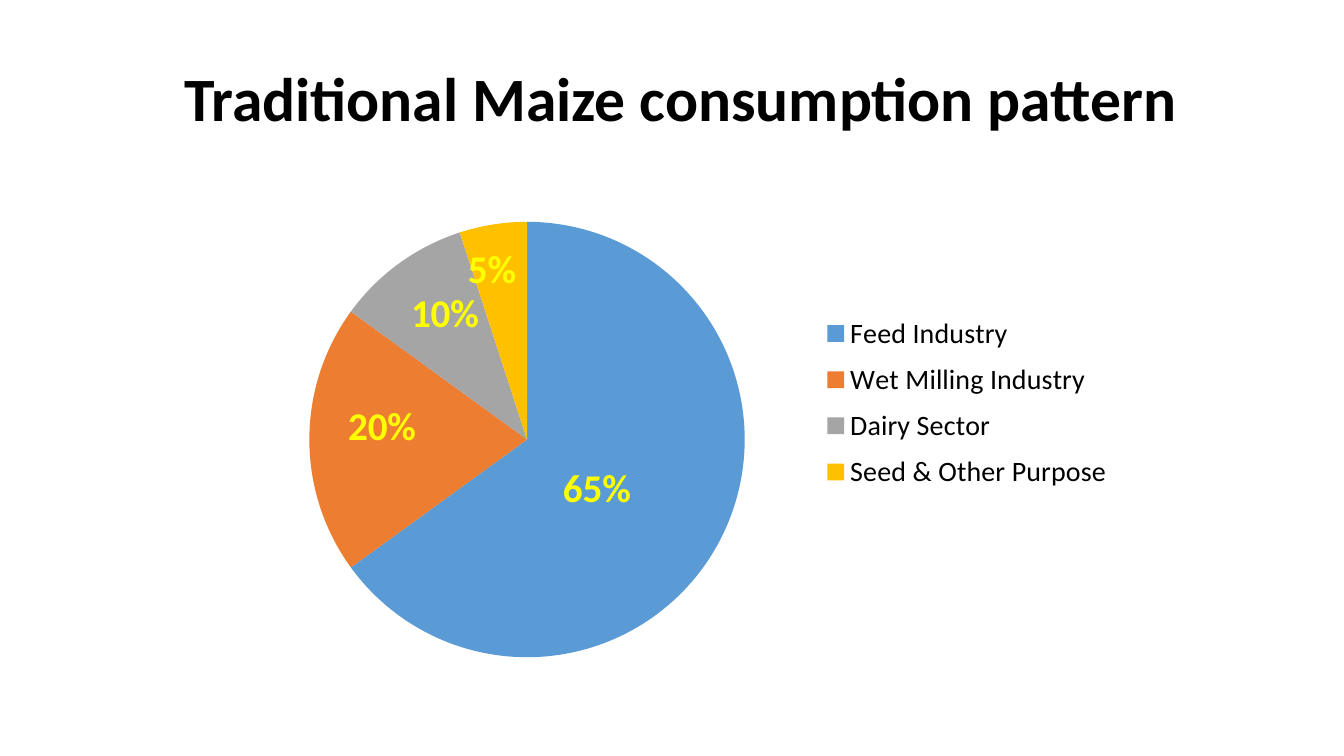
from pptx import Presentation
from pptx.chart.data import CategoryChartData
from pptx.dml.color import RGBColor
from pptx.enum.chart import XL_CHART_TYPE as ChartType
from pptx.enum.chart import XL_LABEL_POSITION as LabelPosition
from pptx.enum.chart import XL_LEGEND_POSITION as LegendPosition
from pptx.enum.text import MSO_ANCHOR as Anchor
from pptx.oxml import parse_xml
from pptx.oxml.ns import nsdecls
from pptx.util import Cm, Pt

COLORS = {
    "background": "FFFFFF",
    "text": "000000",
    "label": "FFFF00",
}

# category, percentage, slice colour, label shift from the slice centre
SLICES = [
    ("Feed Industry", 65, "5B9BD5", (-0.03, 0)),
    ("Wet Milling Industry", 20, "ED7D31", (-0.04, -0.02)),
    ("Dairy Sector", 10, "A5A5A5", (-0.02, -0.06)),
    ("Seed & Other Purpose", 5, "FFC000", (-0.02, -0.1)),
]


def manual_layout(**settings):
    """Return a c:layout element; settings follow the schema's order."""
    items = "".join(f'<c:{name} val="{value}"/>' for name, value in settings.items())
    return parse_xml(
        f'<c:layout {nsdecls("c")}><c:manualLayout>{items}</c:manualLayout></c:layout>'
    )


def place(element, x, y, w, h, **target):
    """Fix a chart part at fractions of the chart's size."""
    for old_layout in element.xpath("./c:layout"):
        element.remove(old_layout)
    layout = manual_layout(**target, xMode="edge", yMode="edge", x=x, y=y, w=w, h=h)
    if element.xpath("./c:legendPos"):
        element.xpath("./c:legendPos")[0].addnext(layout)
    else:
        element.insert(0, layout)


class SlideBuilder:
    font_name = "Calibri"

    def __init__(self, slide):
        self.slide = slide

    def style(self, font, size, color="text", bold=False):
        font.name = self.font_name
        font.size = Pt(size)
        font.bold = bold
        font.color.rgb = RGBColor.from_string(COLORS[color])

    def title(self, text, left, top, width, height):
        shape = self.slide.shapes.add_textbox(Cm(left), Cm(top), Cm(width), Cm(height))
        shape.fill.solid()
        shape.fill.fore_color.rgb = RGBColor.from_string(COLORS["background"])
        frame = shape.text_frame
        frame.word_wrap = True
        frame.vertical_anchor = Anchor.MIDDLE
        paragraph = frame.paragraphs[0]
        paragraph.text = text
        paragraph.line_spacing = 0.9
        self.style(paragraph.font, 44, bold=True)

    def pie(self, slices, left, top, width, height):
        data = CategoryChartData()
        data.categories = [name for name, *_ in slices]
        data.add_series("Series 1", [value for _, value, *_ in slices])
        chart = self.slide.shapes.add_chart(
            ChartType.PIE, Cm(left), Cm(top), Cm(width), Cm(height), data
        ).chart
        self.style(chart.font, 10)
        chart.has_title = False

        chart.has_legend = True
        legend = chart.legend
        legend.position = LegendPosition.RIGHT
        legend.include_in_layout = False
        self.style(legend.font, 20)
        place(legend._element, 0.66, 0.32, 0.33, 0.32)

        plot = chart.plots[0]
        plot.vary_by_categories = True
        place(chart._chartSpace.xpath(".//c:plotArea")[0],
              0.1, 0.18, 0.48, 0.72, layoutTarget="inner")

        plot.has_data_labels = True
        labels = plot.data_labels
        labels.show_percentage = True
        labels.show_value = False
        labels.number_format = "0%"
        labels.number_format_is_linked = False
        self.style(labels.font, 28, "label", bold=True)

        series = plot.series[0]
        for index, (_, _, color, shift) in enumerate(slices):
            point = series.points[index]
            point.format.fill.solid()
            point.format.fill.fore_color.rgb = RGBColor.from_string(color)
            self.point_label(series, index, shift)

    def point_label(self, series, index, shift):
        """Show the slice's percentage, moved by fractions of the chart."""
        label = series.points[index].data_label
        self.style(label.font, 28, "label", bold=True)
        label.position = LabelPosition.CENTER
        element = series._element.xpath(f'.//c:dLbl[c:idx/@val="{index}"]')[0]
        element.xpath("./c:idx")[0].addnext(manual_layout(x=shift[0], y=shift[1]))
        element.xpath("./c:showVal")[0].set("val", "0")
        element.xpath("./c:showPercent")[0].set("val", "1")


def main():
    presentation = Presentation()
    presentation.slide_width = Cm(33.87)
    presentation.slide_height = Cm(19.05)
    slide = presentation.slides.add_slide(presentation.slide_layouts[6])
    builder = SlideBuilder(slide)
    builder.title("Traditional Maize consumption pattern", 4.4, 1.6, 27.38, 1.9)
    builder.pie(SLICES, 5.51, 2.74, 22.86, 15.44)
    presentation.save("out.pptx")


if __name__ == "__main__":
    main()
